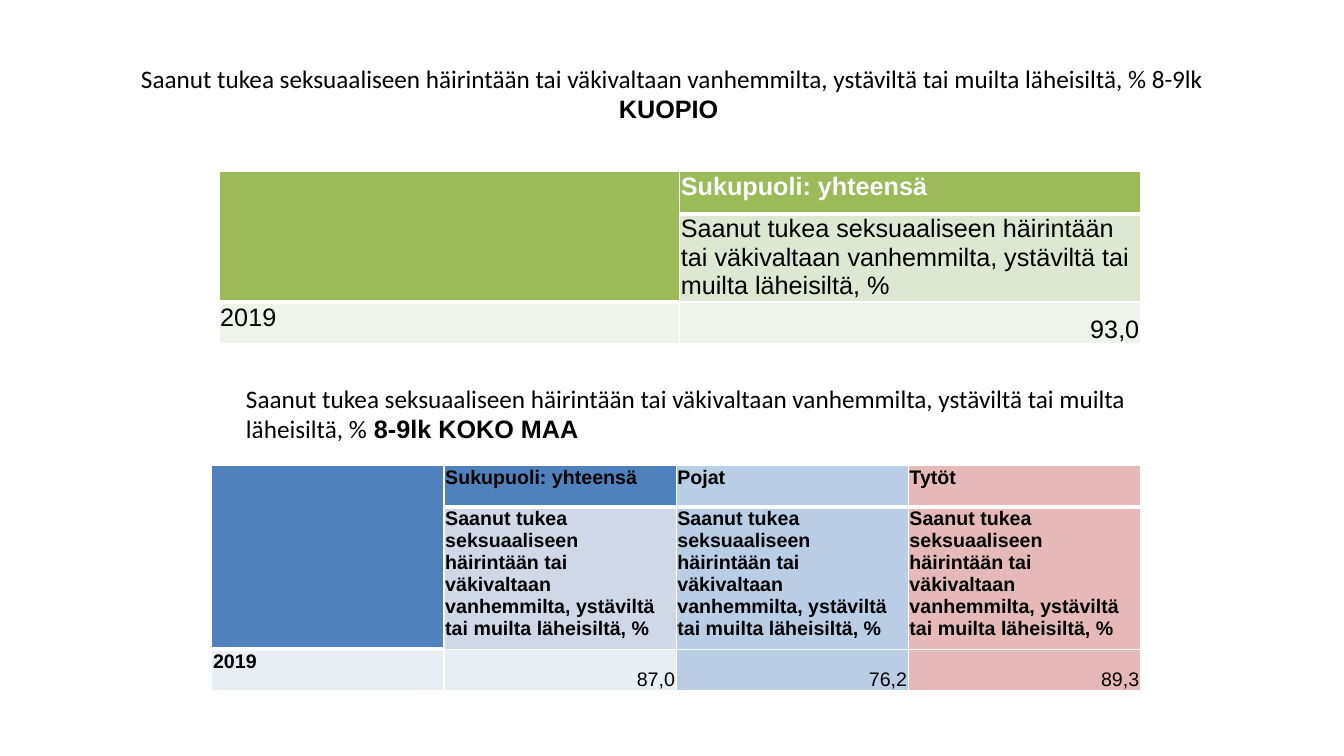
from lxml import etree
from pptx import Presentation
from pptx.dml.color import RGBColor
from pptx.enum.text import MSO_ANCHOR, PP_ALIGN
from pptx.oxml.ns import qn
from pptx.util import Cm, Pt

CENTER, RIGHT, LEFT = PP_ALIGN.CENTER, PP_ALIGN.RIGHT, PP_ALIGN.LEFT
TOP, MIDDLE, BOTTOM = MSO_ANCHOR.TOP, MSO_ANCHOR.MIDDLE, MSO_ANCHOR.BOTTOM
COLORS = {
    "black": "000000", "white": "FFFFFF",
    "green": "9BBB59", "green_mid": "DEE7D1", "green_pale": "EFF3EA",
    "blue": "4F81BD", "blue_mid": "D0D8E8", "blue_pale": "E9EDF4",
    "boys": "B9CDE5", "girls": "E6B9B8",
}
QUESTION = ("Saanut tukea seksuaaliseen häirintään tai väkivaltaan vanhemmilta, "
            "ystäviltä tai muilta läheisiltä, %")


def add_text(paragraph, text, font="Arial", size=18, bold=False, color="black"):
    """Append a formatted run to a paragraph."""
    run = paragraph.add_run()
    run.text = text
    run.font.name = font
    run.font.size = Pt(size)
    run.font.bold = bold
    run.font.color.rgb = RGBColor.from_string(COLORS[color])


class SurveySlide:
    """Holds the shared style and the slide being built."""

    def __init__(self, presentation):
        """Add a slide that has only a title placeholder."""
        self.slide = presentation.slides.add_slide(presentation.slide_layouts[5])
        self.border_color = COLORS["white"]

    def title(self, text, place, left, top, width, height):
        """Fill and place the title, with the place name on its own line."""
        shape = self.slide.shapes.title
        shape.left, shape.top, shape.width, shape.height = map(Cm, (left, top, width, height))
        shape.text_frame.vertical_anchor = MIDDLE
        paragraph = shape.text_frame.paragraphs[0]
        paragraph.alignment = CENTER
        add_text(paragraph, text, font="Calibri")
        paragraph.add_line_break()
        add_text(paragraph, place, bold=True)

    def caption(self, text, place, left, top, width, height):
        """Add a wrapped caption ending in a bold place name."""
        shape = self.slide.shapes.add_textbox(*map(Cm, (left, top, width, height)))
        shape.text_frame.word_wrap = True
        paragraph = shape.text_frame.paragraphs[0]
        add_text(paragraph, text, font="Calibri")
        add_text(paragraph, place, bold=True)

    def border(self, cell, side, width):
        """Draw one side of a cell border."""
        properties = cell._tc.get_or_add_tcPr()
        line = etree.Element(qn(f"a:ln{side}"), w=str(Pt(width)))
        fill = etree.SubElement(line, qn("a:solidFill"))
        etree.SubElement(fill, qn("a:srgbClr"), val=self.border_color)
        properties.insert("LRTB".index(side), line)

    def table(self, left, top, column_width, row_heights, groups, values, fills,
              size, header_color="black", bold=False):
        """Add a table of one year with a two-row header."""
        rows = [["", *groups], ["", *[QUESTION] * len(groups)], ["2019", *values]]
        columns = len(rows[0])
        frame = self.slide.shapes.add_table(
            len(rows), columns, Cm(left), Cm(top),
            Cm(column_width * columns), Cm(sum(row_heights)))
        table = frame.table
        for column in table.columns:
            column.width = Cm(column_width)
        for row, height in zip(table.rows, row_heights):
            row.height = Cm(height)
        table.cell(0, 0).merge(table.cell(1, 0))
        for row, texts in enumerate(rows):
            for column, text in enumerate(texts):
                cell = table.cell(row, column)
                is_value = row == 2 and column > 0
                cell.margin_left = cell.margin_right = cell.margin_top = Cm(0.03)
                cell.margin_bottom = 0
                cell.vertical_anchor = BOTTOM if is_value else TOP
                cell.fill.solid()
                cell.fill.fore_color.rgb = RGBColor.from_string(COLORS[fills[row][column]])
                header_rows = 1 if column else 2
                self.border(cell, "L", 1)
                self.border(cell, "R", 1)
                self.border(cell, "T", 3 if row == header_rows else 1)
                self.border(cell, "B", 3 if row < header_rows else 1)
                if text:
                    paragraph = cell.text_frame.paragraphs[0]
                    paragraph.alignment = RIGHT if is_value else LEFT
                    add_text(paragraph, text, size=size,
                             bold=row == 0 or (bold and not is_value),
                             color=header_color if row == 0 else "black")


def main():
    """Build and save the presentation."""
    presentation = Presentation()
    presentation.slide_width, presentation.slide_height = Cm(33.87), Cm(19.05)
    survey = SurveySlide(presentation)
    survey.title(f"{QUESTION} 8-9lk", "KUOPIO ", 1.7, 0.76, 30.48, 3.18)
    survey.table(5.52, 4.33, 11.61, (1.06, 2.22, 1.06),
                 ["Sukupuoli: yhteensä"], ["93,0"],
                 [["green"] * 2, ["green", "green_mid"], ["green_pale"] * 2],
                 size=18, header_color="white")
    survey.caption(QUESTION, " 8-9lk KOKO MAA", 5.95, 9.53, 22.8, 1.8)
    survey.table(5.34, 11.73, 5.85, (1.04, 3.57, 1.04),
                 ["Sukupuoli: yhteensä", "Pojat", "Tytöt"], ["87,0", "76,2", "89,3"],
                 [["blue", shade, "boys", "girls"] for shade in ("blue", "blue_mid")]
                 + [["blue_pale", "blue_pale", "boys", "girls"]],
                 size=14, bold=True)
    presentation.save("out.pptx")


if __name__ == "__main__":
    main()
